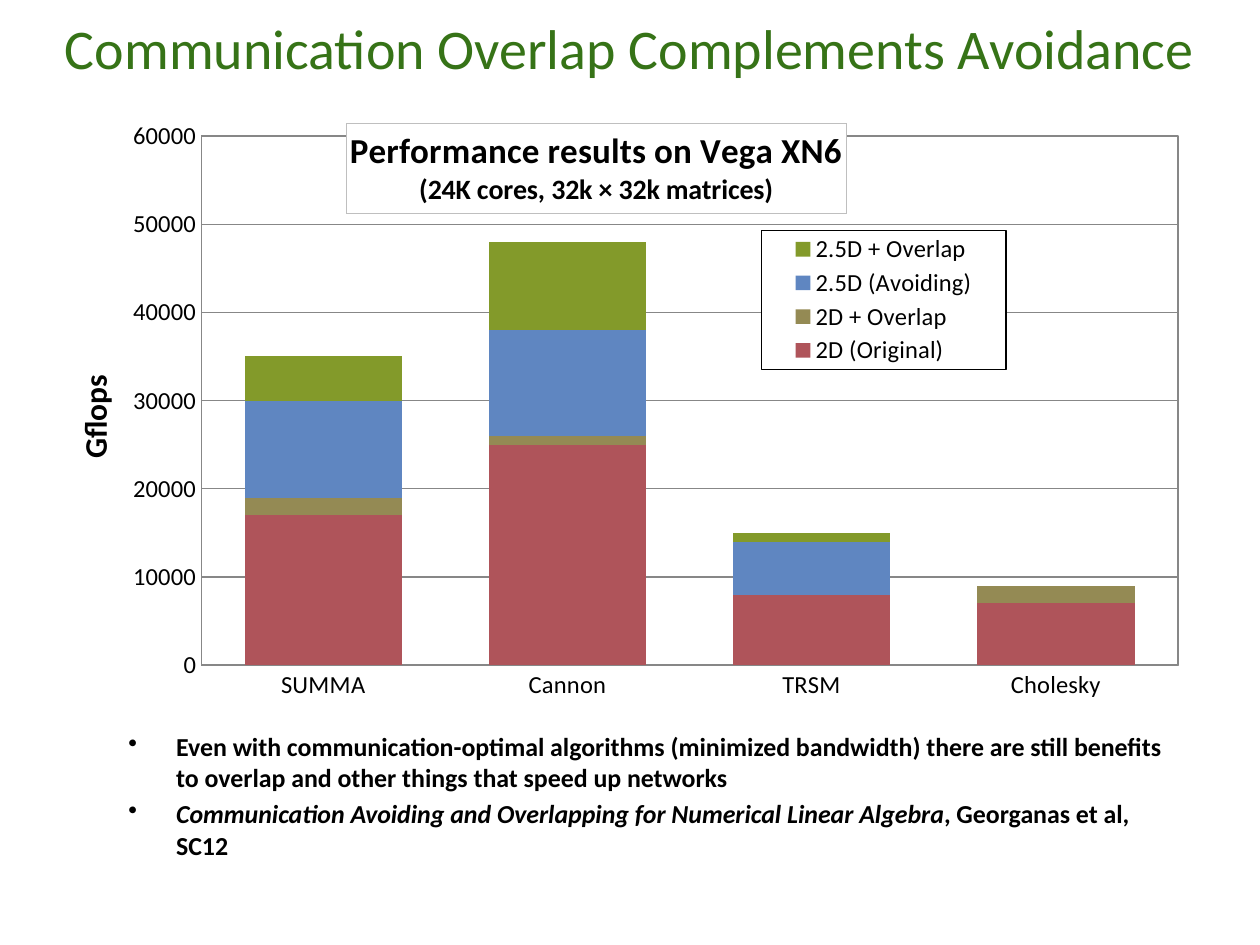
from lxml import etree
from pptx import Presentation, util as u
from pptx.chart.data import CategoryChartData
from pptx.dml.color import RGBColor
from pptx.enum import chart as ch, text as t
from pptx.oxml import parse_xml
from pptx.oxml.ns import nsdecls, qn

# Content
HEADING = "Communication Overlap Complements Avoidance"
ALGORITHMS = ["SUMMA", "Cannon", "TRSM", "Cholesky"]
VARIANTS = [
    ("2D (Original)", [17000, 25000, 8000, 7000], "AF545A"),
    ("2D + Overlap", [2000, 1000, 0, 2000], "948A54"),
    ("2.5D (Avoiding)", [11000, 12000, 6000, 0], "5F86C1"),
    ("2.5D + Overlap", [5000, 10000, 1000, 0], "839A2A"),
]
CHART_TITLE = [("Performance results on Vega XN6", 20),
               ("(24K cores, 32k × 32k matrices)", 16)]
NOTES = [  # each note is a list of (text, italic)
    [("Even with communication-optimal algorithms (minimized bandwidth) there are "
      "still benefits to overlap and other things that speed up networks", False)],
    [("Communication Avoiding and Overlapping for Numerical Linear Algebra", True),
     (", Georganas et al, SC12", False)],
]
FONT, GRID = "Calibri", "878787"


def rgb(value):
    return RGBColor.from_string(value)


def style(font, size, color="000000", bold=False, italic=False):
    font.name, font.size, font.bold, font.italic = FONT, u.Pt(size), bold, italic
    font.color.rgb = rgb(color)


def place(parent, x, y, w=None, h=None, after=None, inner=False):
    """Give a chart part a fixed place, as fractions of the chart."""
    for old in parent.findall(qn("c:layout")):
        parent.remove(old)
    layout = etree.Element(qn("c:layout"))
    manual = etree.SubElement(layout, qn("c:manualLayout"))
    settings = [("layoutTarget", "inner" if inner else None),
                ("xMode", "edge"), ("yMode", "edge"),
                ("x", x), ("y", y), ("w", w), ("h", h)]
    for tag, value in settings:
        if value is not None:
            etree.SubElement(manual, qn("c:" + tag)).set("val", str(value))
    if after:
        parent.find(qn(after)).addnext(layout)
    else:
        parent.insert(0, layout)


def box(line, fill="<a:noFill/>"):
    return parse_xml(
        f'<c:spPr {nsdecls("c", "a")}>{fill}<a:ln w="9525"><a:solidFill>'
        f'<a:srgbClr val="{line}"/></a:solidFill></a:ln></c:spPr>')


def text_area(slide, left, top, width, height):
    frame = slide.shapes.add_textbox(*map(u.Inches, (left, top, width, height))).text_frame
    frame.word_wrap = True
    return frame


prs = Presentation()
prs.slide_width, prs.slide_height = u.Inches(10), u.Inches(7.5)
slide = prs.slides.add_slide(prs.slide_layouts[6])

# Stacked columns
data = CategoryChartData()
data.categories = ALGORITHMS
for name, gflops, _ in VARIANTS:
    data.add_series(name, gflops)
chart = slide.shapes.add_chart(
    ch.XL_CHART_TYPE.COLUMN_STACKED,
    *map(u.Inches, (0.25, 0.83, 9.42, 5)), data).chart
style(chart.font, 14)
columns = chart.plots[0]
columns.gap_width, columns.overlap, columns.vary_by_categories = 55, 100, False
for series, (_, _, color) in zip(columns.series, VARIANTS):
    series.format.fill.solid()
    series.format.fill.fore_color.rgb = rgb(color)

plot_area = chart._chartSpace.chart.plotArea
place(plot_area, 0.143, 0.05, 0.823, 0.84, inner=True)
plot_area.append(box(GRID))

# Axes
gflops_axis = chart.value_axis
gflops_axis.minimum_scale, gflops_axis.maximum_scale, gflops_axis.major_unit = 0, 60000, 10000
gflops_axis.major_gridlines.format.line.color.rgb = rgb(GRID)
for axis in (gflops_axis, chart.category_axis):
    axis.major_tick_mark = axis.minor_tick_mark = ch.XL_TICK_MARK.NONE
    axis.format.line.color.rgb = rgb(GRID)
axis_title = gflops_axis.axis_title
axis_title.text_frame.text = "Gflops"
style(axis_title.text_frame.paragraphs[0].runs[0].font, 18, bold=True)
place(axis_title._element, 0.03, 0.42, after="c:tx")

# Chart title over the plot
chart.has_title = True
title = chart.chart_title
title.include_in_layout = True
title.text_frame.text = "\n".join(line for line, _ in CHART_TITLE)
for paragraph, (_, size) in zip(title.text_frame.paragraphs, CHART_TITLE):
    style(paragraph.runs[0].font, size, bold=True)
title.format.fill.solid()
title.format.fill.fore_color.rgb = rgb("FFFFFF")
title.format.line.color.rgb = rgb("BFBFBF")
place(title._element, 0.265, 0.03, after="c:tx")

# Legend inside the plot
chart.has_legend = True
legend = chart.legend
legend.position = ch.XL_LEGEND_POSITION.RIGHT
legend.include_in_layout = False
style(legend.font, 14)
place(legend._element, 0.615, 0.2, 0.206, 0.22, after="c:legendPos")
legend._element.find(qn("c:txPr")).addprevious(
    box("000000", '<a:solidFill><a:srgbClr val="FFFFFF"/></a:solidFill>'))

# Heading
heading = text_area(slide, 0, 0, 10, 0.75)
heading.vertical_anchor = t.MSO_ANCHOR.MIDDLE
heading.text = HEADING
heading.paragraphs[0].alignment = t.PP_ALIGN.CENTER
style(heading.paragraphs[0].runs[0].font, 32, "367317")

# Bulleted notes
notes = text_area(slide, 0.92, 5.75, 8.5, 1.08)
for i, parts in enumerate(NOTES):
    paragraph = notes.add_paragraph() if i else notes.paragraphs[0]
    props = paragraph._p.get_or_add_pPr()
    props.set("marL", str(u.Inches(0.38)))
    props.set("indent", str(-u.Inches(0.38)))
    etree.SubElement(props, qn("a:buChar")).set("char", "•")
    if i:
        paragraph.space_before = u.Pt(3)
    for words, italic in parts:
        run = paragraph.add_run()
        run.text = words
        style(run.font, 14.8, bold=True, italic=italic)

prs.save("out.pptx")
